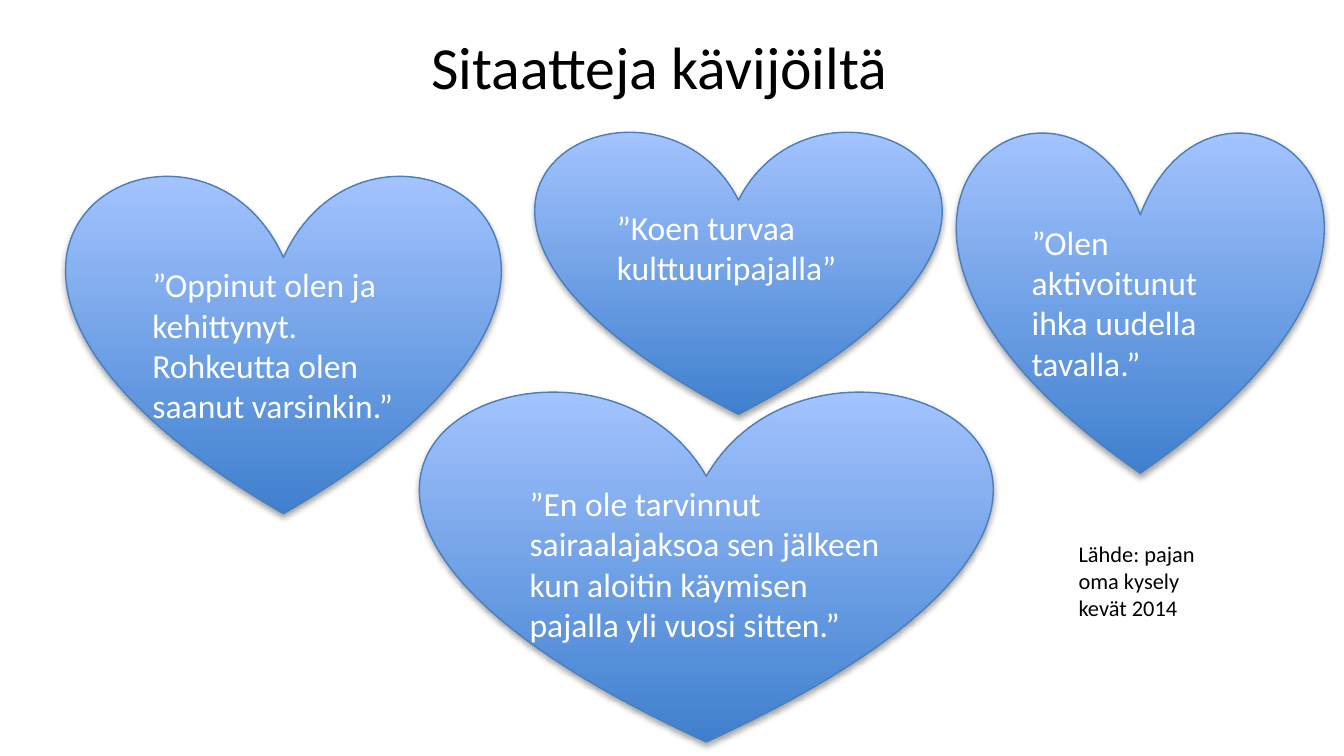
import pptx
import pptx.util
import pptx.dml.color
import pptx.enum.shapes
import pptx.enum.text
import pptx.oxml

PX = 9525
SHADOW = (
    '<a:outerShdw xmlns:a="http://schemas.openxmlformats.org/drawingml/2006/main" '
    'blurRad="40000" dist="23000" dir="5400000" rotWithShape="0">'
    '<a:srgbClr val="000000"><a:alpha val="35000"/></a:srgbClr></a:outerShdw>'
)


def color(value):
    return pptx.dml.color.RGBColor.from_string(value)


def write(shape, texts, size, text_color, align, anchor):
    frame = shape.text_frame
    frame.word_wrap = True
    frame.auto_size = pptx.enum.text.MSO_AUTO_SIZE.NONE
    frame.vertical_anchor = anchor
    for index, text in enumerate(texts):
        paragraph = frame.add_paragraph() if index else frame.paragraphs[0]
        paragraph.alignment = align
        run = paragraph.add_run()
        run.text = text
        run.font.name = "Calibri"
        run.font.size = pptx.util.Pt(size)
        run.font.color.rgb = color(text_color)


ALIGN = pptx.enum.text.PP_ALIGN
ANCHOR = pptx.enum.text.MSO_ANCHOR

presentation = pptx.Presentation()
presentation.slide_width = 960 * PX
presentation.slide_height = 540 * PX
slide = presentation.slides.add_slide(presentation.slide_layouts[5])

title = slide.shapes.title
title.left, title.top, title.width, title.height = 39 * PX, 2 * PX, 864 * PX, 90 * PX
write(title, ["Sitaatteja kävijöiltä"], 32, "000000", ALIGN.CENTER, ANCHOR.MIDDLE)

quotes = [
    (684, 92, 261, 246, ["”Olen aktivoitunut ihka uudella tavalla.”"]),
    (383, 92, 289, 204, ["”Koen turvaa kulttuuripajalla”"]),
    (48, 123, 309, 244, ["”Oppinut olen ja kehittynyt.", "Rohkeutta olen saanut varsinkin.”"]),
    (301, 277, 407, 253, ["”En ole tarvinnut sairaalajaksoa sen jälkeen kun aloitin käymisen pajalla yli vuosi sitten.”"]),
]
for left, top, width, height, texts in quotes:
    heart = slide.shapes.add_shape(
        pptx.enum.shapes.MSO_SHAPE.HEART, left * PX, top * PX, width * PX, height * PX
    )
    heart.fill.gradient()
    heart.fill.gradient_angle = 90
    for stop, stop_color in zip(heart.fill.gradient_stops, ("3F80CE", "A4C4FF")):
        stop.color.rgb = color(stop_color)
    heart.line.color.rgb = color("4B7EBC")
    heart.line.width = pptx.util.Pt(0.75)
    heart.shadow.inherit = False
    effects = heart._element.spPr.find(pptx.oxml.ns.qn("a:effectLst"))
    effects.append(pptx.oxml.parse_xml(SHADOW))
    write(heart, texts, 18, "FFFFFF", ALIGN.LEFT, ANCHOR.TOP)

source_note = slide.shapes.add_textbox(761 * PX, 381 * PX, 109 * PX, 68 * PX)
write(source_note, ["Lähde: pajan oma kysely kevät 2014"], 12, "000000", ALIGN.LEFT, ANCHOR.TOP)
source_note.text_frame.auto_size = pptx.enum.text.MSO_AUTO_SIZE.SHAPE_TO_FIT_TEXT

presentation.save("out.pptx")
